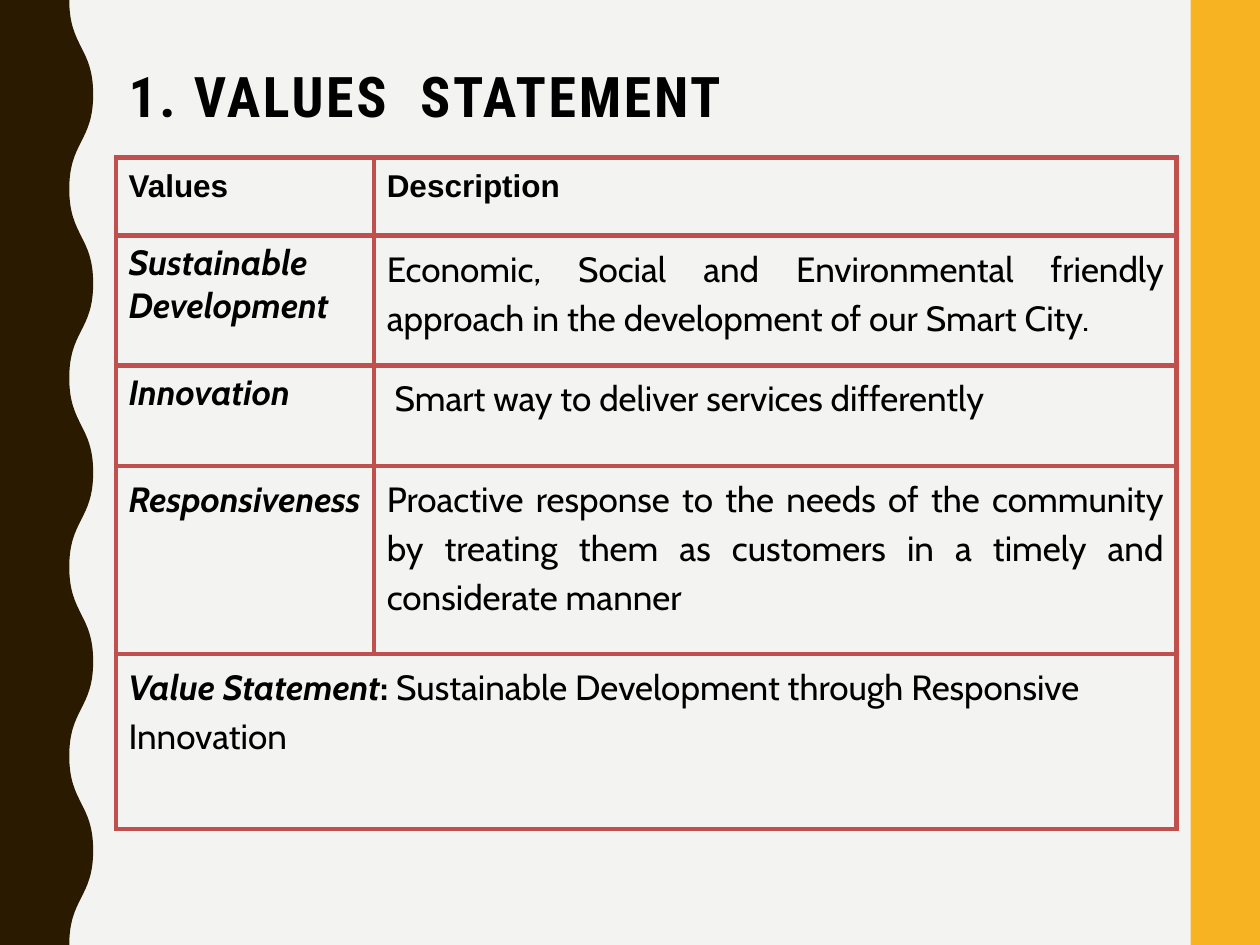
from lxml.etree import SubElement
from pptx import Presentation
from pptx.dml.color import RGBColor
from pptx.enum.shapes import MSO_SHAPE
from pptx.enum.text import MSO_ANCHOR, PP_ALIGN
from pptx.oxml.ns import qn
from pptx.util import Inches, Pt

PAPER = RGBColor(0xF3, 0xF3, 0xF2)
GOLD = RGBColor(0xF8, 0xB3, 0x23)
BROWN = RGBColor(0x2A, 0x1A, 0x00)
RED = RGBColor(0xC0, 0x50, 0x4D)
BLACK = RGBColor(0, 0, 0)

COLS = [2.05, 6.37]
ROWS = [0.62, 1.03, 0.8, 1.49, 1.39]
VALUES = [
    ("Sustainable Development",
     "Economic, Social and Environmental friendly approach in the "
     "development of our Smart City."),
    ("Innovation", " Smart way to deliver services differently"),
    ("Responsiveness",
     "Proactive response to the needs of the community by treating them "
     "as customers in a timely and considerate manner"),
]


def paint(shape, color):
    shape.shadow.inherit = False
    shape.fill.solid()
    shape.fill.fore_color.rgb = color
    shape.line.fill.background()


def add_band(slide, left):
    band = slide.shapes.add_shape(
        MSO_SHAPE.RECTANGLE, Inches(left), 0,
        Inches(10 - left), Inches(7.5))
    paint(band, GOLD)


def add_wave(slide, low=0.55, high=0.74, half=0.75):
    """Draw the left strip, whose right edge swings between low and high."""
    turns = [(Inches(low if n % 2 == 0 else high), Inches(n * half))
             for n in range(11)]
    outline = slide.shapes.build_freeform(*turns[0], scale=1.0)
    outline.add_line_segments(turns[1:] + [(0, Inches(7.5)), (0, 0)],
                              close=True)
    strip = outline.convert_to_shape()
    paint(strip, BROWN)
    lines = list(strip._element.iter(qn("a:lnTo")))
    for line, start, end in zip(lines, turns, turns[1:]):
        bend(line, start, end)


def bend(line, start, end):
    """Turn a straight segment into an S-curve with upright ends."""
    mid = (start[1] + end[1]) // 2
    line.tag = qn("a:cubicBezTo")
    line.remove(line[0])
    for x, y in ((start[0], mid), (end[0], mid), end):
        SubElement(line, qn("a:pt"), x=str(x), y=str(y))


def style(run, size, name, bold=False, italic=False):
    font = run.font
    font.size, font.name = Pt(size), name
    font.bold, font.italic = bold, italic
    font.color.rgb = BLACK


def set_title(slide):
    title = slide.shapes.title
    title.left, title.top = Inches(0.92), Inches(0.5)
    title.width, title.height = Inches(8.5), Inches(0.75)
    frame = title.text_frame
    frame.text = "1. VALUES  STATEMENT"
    frame.vertical_anchor = MSO_ANCHOR.TOP
    para = frame.paragraphs[0]
    para.alignment = PP_ALIGN.LEFT
    para.line_spacing = 0.9
    run = para.runs[0]
    style(run, 32, "Roboto Condensed", bold=True)
    run.font._element.set("spc", "150")


def set_border(cell):
    props = cell._tc.get_or_add_tcPr()
    for index, side in enumerate(("a:lnL", "a:lnR", "a:lnT", "a:lnB")):
        line = SubElement(props, qn(side), w=str(Pt(3)))
        fill = SubElement(line, qn("a:solidFill"))
        SubElement(fill, qn("a:srgbClr"), val=str(RED))
        props.insert(index, line)


def fill_cell(cell, text, size=20, name="Cabin", bold=False, italic=False,
              align=PP_ALIGN.LEFT, loose=True):
    """Write one cell; loose text has wider lines and space after."""
    cell.text_frame.text = text
    para = cell.text_frame.paragraphs[0]
    para.alignment = align
    if loose:
        para.line_spacing = 1.15
        para.space_after = Pt(10)
    style(para.runs[0], size, name, bold, italic)
    return para


def add_values(slide):
    table = slide.shapes.add_table(
        len(ROWS), len(COLS), Inches(0.92), Inches(1.25),
        Inches(sum(COLS)), Inches(sum(ROWS))).table
    table.first_row = table.horz_banding = False
    for col, width in zip(table.columns, COLS):
        col.width = Inches(width)
    for row, height in zip(table.rows, ROWS):
        row.height = Inches(height)
    last = len(ROWS) - 1
    table.cell(last, 0).merge(table.cell(last, 1))
    for cell in table.iter_cells():
        cell.fill.background()
        set_border(cell)

    for col, head in enumerate(("Values", "Description")):
        fill_cell(table.cell(0, col), head, 18, "Arial", bold=True)
    for row, (value, about) in enumerate(VALUES, 1):
        fill_cell(table.cell(row, 0), value, bold=True, italic=True,
                  loose=value == "Responsiveness")
        fill_cell(table.cell(row, 1), about, align=PP_ALIGN.JUSTIFY)
    para = fill_cell(table.cell(last, 0), "Value Statement",
                     bold=True, italic=True)
    for text, bold in (
            (": ", True),
            ("Sustainable Development through Responsive Innovation", False)):
        run = para.add_run()
        run.text = text
        style(run, 20, "Cabin", bold)


def main():
    deck = Presentation()
    deck.slide_width, deck.slide_height = Inches(10), Inches(7.5)
    slide = deck.slides.add_slide(deck.slide_layouts[5])
    slide.background.fill.solid()
    slide.background.fill.fore_color.rgb = PAPER
    for left in (9.77, 9.45):
        add_band(slide, left)
    add_wave(slide)
    set_title(slide)
    add_values(slide)
    deck.save("out.pptx")


if __name__ == "__main__":
    main()
